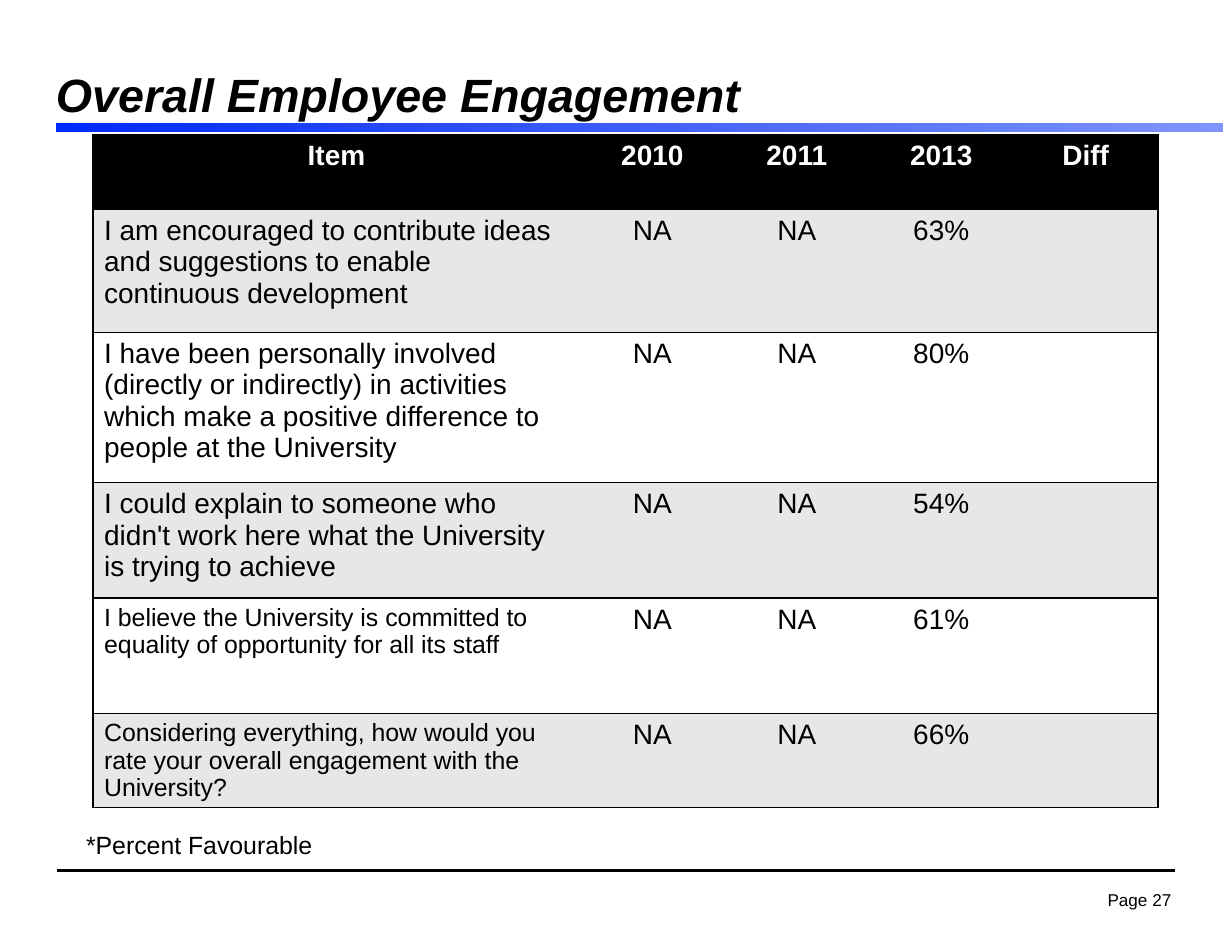
import pptx
import pptx.util
import pptx.dml.color
import pptx.enum.shapes
import pptx.enum.text
import pptx.oxml
import pptx.oxml.ns

Inches, Pt = pptx.util.Inches, pptx.util.Pt
ALIGN = pptx.enum.text.PP_ALIGN
ANCHOR = pptx.enum.text.MSO_ANCHOR

HUES = {"ink": "000000", "paper": "FFFFFF", "band": "E7E7E7",
        "blue": "002AF9", "pale": "7F94FC"}
HEADS = ["Item", "2010", "2011", "2013", "Diff"]
ITEMS = [
    ("I am encouraged to contribute ideas and suggestions to enable "
     "continuous development", "63%", 18, 1.1),
    ("I have been personally involved (directly or indirectly) in activities "
     "which make a positive difference to people at the University", "80%", 18, 1.34),
    ("I could explain to someone who didn't work here what the University "
     "is trying to achieve", "54%", 18, 1.03),
    ("I believe the University is committed to equality of opportunity "
     "for all its staff", "61%", 16, 1.03),
    ("Considering everything, how would you rate your overall engagement "
     "with the University?", "66%", 16, 0.84),
]
WIDTHS = [4.35] + [1.29] * 4
HEIGHTS = [0.67] + [item[3] for item in ITEMS]
LABELS = [
    ("Overall Employee Engagement", (0.5, 0.67, 10.33, 0.42),
     {"size": Pt(30), "bold": True, "italic": True}, {"line_spacing": 1.0},
     {"vertical_anchor": ANCHOR.BOTTOM, "word_wrap": True, "margin_left": 0,
      "margin_right": 0, "margin_top": 0, "margin_bottom": 0}),
    ("*Percent Favourable", (0.67, 7.36, 3.58, 0.37),
     {"size": Pt(16)}, {}, {"word_wrap": True}),
    ("Page 27", (9.76, 7.9, 0.81, 0.28), {"size": Pt(11)},
     {"alignment": ALIGN.RIGHT, "line_spacing": 0.9},
     {"word_wrap": False, "margin_left": Inches(0.11), "margin_right": Inches(0.11),
      "margin_top": Inches(0.06), "margin_bottom": Inches(0.06)}),
]


def tint(name):
    return pptx.dml.color.RGBColor.from_string(HUES[name])


def apply(target, values):
    for key, value in values.items():
        setattr(target, key, value)


def write(frame, text, font, para=None, hue="ink"):
    line = frame.paragraphs[0]
    line.text = text
    apply(line, para or {})
    face = line.runs[0].font
    apply(face, {"name": "Arial", **font})
    face.color.rgb = tint(hue)


def edge(cell, sides):
    props = cell._tc.get_or_add_tcPr()
    space = pptx.oxml.ns.nsdecls("a")
    for spot, side in enumerate("LRTB"):
        paint = (f'<a:solidFill><a:srgbClr val="{HUES["ink"]}"/></a:solidFill>'
                 if side in sides else "<a:noFill/>")
        props.insert(spot, pptx.oxml.parse_xml(
            f'<a:ln{side} {space} w="{Pt(1)}">{paint}</a:ln{side}>'))


def add_rules(slide):
    rule = slide.shapes.add_connector(
        pptx.enum.shapes.MSO_CONNECTOR.STRAIGHT,
        *map(Inches, (0.51, 7.77, 10.49, 7.77)))
    rule.line.color.rgb = tint("ink")
    rule.line.width = Pt(2)
    rule._element.spPr.append(pptx.oxml.parse_xml(
        f'<a:effectLst {pptx.oxml.ns.nsdecls("a")}/>'))
    bar = slide.shapes.add_shape(
        pptx.enum.shapes.MSO_SHAPE.RECTANGLE, *map(Inches, (0.5, 1.1, 10.42, 0.08)))
    bar.shadow.inherit = False
    bar.line.fill.background()
    bar.fill.gradient()
    bar.fill.gradient_angle = 0
    for stop, hue in zip(bar.fill.gradient_stops, ("blue", "pale")):
        stop.color.rgb = tint(hue)


def add_grid(slide):
    rows = [HEADS] + [[text, "NA", "NA", score, ""] for text, score, *_ in ITEMS]
    table = slide.shapes.add_table(
        len(rows), len(HEADS),
        *map(Inches, (0.83, 1.2, sum(WIDTHS), sum(HEIGHTS)))).table
    apply(table, {"first_row": False, "horz_banding": False})
    for col, width in zip(table.columns, WIDTHS):
        col.width = Inches(width)
    for r, row in enumerate(rows):
        table.rows[r].height = Inches(HEIGHTS[r])
        for c, text in enumerate(row):
            cell = table.cell(r, c)
            cell.fill.solid()
            cell.fill.fore_color.rgb = tint(
                "ink" if r == 0 else "band" if r % 2 else "paper")
            edge(cell, "TB" + {0: "L", len(row) - 1: "R"}.get(c, ""))
            if text:
                size = ITEMS[r - 1][2] if r and c == 0 else 18
                side = ALIGN.LEFT if r and c == 0 else ALIGN.CENTER
                write(cell.text_frame, text, {"size": Pt(size), "bold": r == 0},
                      {"alignment": side}, "ink" if r else "paper")


def main():
    deck = pptx.Presentation()
    apply(deck, {"slide_width": Inches(11), "slide_height": Inches(8.5)})
    slide = deck.slides.add_slide(deck.slide_layouts[6])
    add_rules(slide)
    add_grid(slide)
    for text, place, font, para, box in LABELS:
        frame = slide.shapes.add_textbox(*map(Inches, place)).text_frame
        apply(frame, box)
        write(frame, text, font, para)
    deck.save("out.pptx")


if __name__ == "__main__":
    main()
